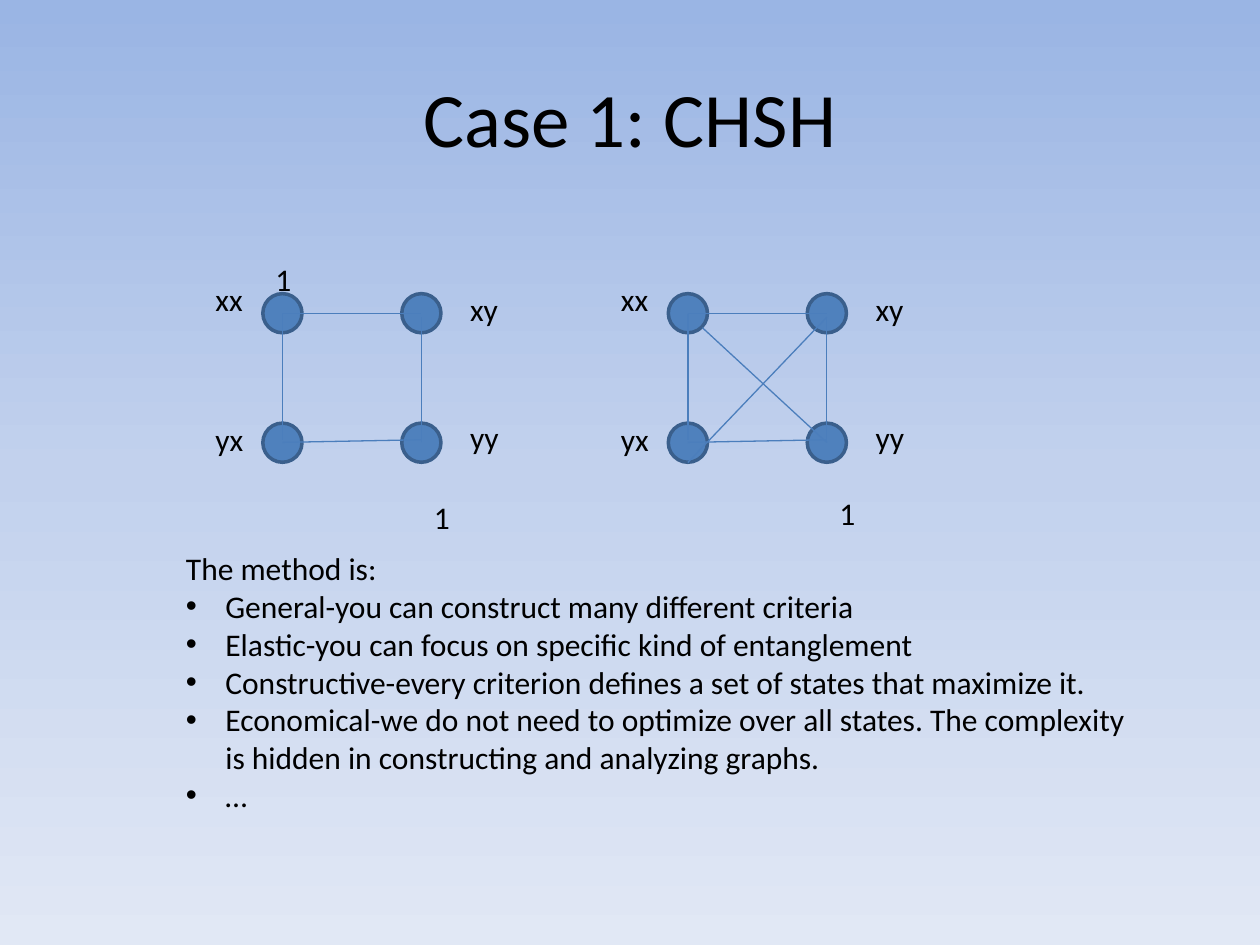
from copy import deepcopy

from lxml import etree
from pptx import Presentation
from pptx.dml.color import RGBColor
from pptx.enum.shapes import MSO_CONNECTOR, MSO_SHAPE
from pptx.enum.text import MSO_ANCHOR, MSO_AUTO_SIZE, PP_ALIGN
from pptx.oxml.ns import qn
from pptx.util import Pt

OVAL = MSO_SHAPE.OVAL
STRAIGHT = MSO_CONNECTOR.STRAIGHT
LEFT, CENTER = PP_ALIGN.LEFT, PP_ALIGN.CENTER
TOP, MIDDLE = MSO_ANCHOR.TOP, MSO_ANCHOR.MIDDLE
NO_FIT, FIT_SHAPE = MSO_AUTO_SIZE.NONE, MSO_AUTO_SIZE.SHAPE_TO_FIT_TEXT

BACKGROUND = [(0, "9AB5E4"), (0.5, "C2D1ED"), (1, "E1E8F5")]
NODE_SIZE = 22.4
COLUMN_STEP, ROW_STEP = 79.4, 74
LABEL_WIDTH, WEIGHT_WIDTH, LABEL_HEIGHT = 32, 23.5, 29
INDENT = 22.5

# Offsets in points from the top left corner of a graph
LABELS = [("xx", -34.2, -11.2), ("xy", 111.3, -5.8),
          ("yy", 111.3, 67.7), ("yx", -34.2, 68.4)]
SIDES = [(90.5, 85, 90.5, 13.5), (11.2, 83.5, 11.2, 11.5),
         (11.2, 11.5, 90.5, 11.5), (90.5, 83.5, 11.2, 85)]
DIAGONALS = [(19.5, 19.5, 90.5, 85), (90.5, 13.5, 11.2, 96.5)]

METHOD_POINTS = [
    "General-you can construct many different criteria",
    "Elastic-you can focus on specific kind of entanglement",
    "Constructive-every criterion defines a set of states that maximize it.",
    "Economical-we do not need to optimize over all states. "
    "The complexity is hidden in constructing and analyzing graphs.",
    "…",
]


def color(value):
    return RGBColor.from_string(value)


def paint_background(slide):
    fill = slide.background.fill
    fill.gradient()
    fill.gradient_angle = 270
    first = fill._fill._gradFill.gsLst[0]
    first.addnext(deepcopy(first))
    for stop, (position, value) in zip(fill.gradient_stops, BACKGROUND):
        stop.position = position
        stop.color.rgb = color(value)


def add_text(slide, text, left, top, width, height, size=18, align=LEFT,
             anchor=TOP, wrap=False, fit=FIT_SHAPE):
    """Add a text box with one paragraph per line of text."""
    box = slide.shapes.add_textbox(Pt(left), Pt(top), Pt(width), Pt(height))
    frame = box.text_frame
    frame.text = text
    frame.word_wrap = wrap
    frame.auto_size = fit
    frame.vertical_anchor = anchor
    for paragraph in frame.paragraphs:
        paragraph.alignment = align
        font = paragraph.runs[0].font
        font.name = "Calibri"
        font.size = Pt(size)
        font.color.rgb = color("000000")
    return frame


def add_bullet(paragraph):
    properties = paragraph._p.get_or_add_pPr()
    properties.set("marL", str(Pt(INDENT)))
    properties.set("indent", str(-Pt(INDENT)))
    etree.SubElement(properties, qn("a:buFont"), typeface="Arial")
    etree.SubElement(properties, qn("a:buChar"), char="•")


def add_node(slide, left, top):
    node = slide.shapes.add_shape(
        OVAL, Pt(left), Pt(top), Pt(NODE_SIZE), Pt(NODE_SIZE))
    node.shadow.inherit = False
    node.fill.solid()
    node.fill.fore_color.rgb = color("4F81BD")
    node.line.color.rgb = color("3A5F8C")
    node.line.width = Pt(2)


def add_edge(slide, start_x, start_y, end_x, end_y):
    edge = slide.shapes.add_connector(
        STRAIGHT, Pt(start_x), Pt(start_y), Pt(end_x), Pt(end_y))
    edge.line.color.rgb = color("4B7EBC")
    edge.line.width = Pt(0.75)
    etree.SubElement(edge._element.spPr, qn("a:effectLst"))


def add_graph(slide, left, top, edges, weights):
    """Draw four nodes, their edges and labels; weights are offsets of the 1s."""
    for row in range(2):
        for column in range(2):
            add_node(slide, left + column * COLUMN_STEP, top + row * ROW_STEP)
    for start_x, start_y, end_x, end_y in edges:
        add_edge(slide, left + start_x, top + start_y,
                 left + end_x, top + end_y)
    for text, x, y in LABELS:
        add_text(slide, text, left + x, top + y, LABEL_WIDTH, LABEL_HEIGHT)
    for x, y in weights:
        add_text(slide, "1", left + x, top + y, WEIGHT_WIDTH, LABEL_HEIGHT)


def add_method(slide, left, top, width, height):
    lines = ["The method is:"] + METHOD_POINTS
    frame = add_text(slide, "\n".join(lines), left, top, width, height,
                     wrap=True)
    for paragraph in frame.paragraphs[1:]:
        add_bullet(paragraph)


def main():
    presentation = Presentation()
    presentation.slide_width, presentation.slide_height = Pt(720), Pt(540)
    slide = presentation.slides.add_slide(presentation.slide_layouts[6])
    paint_background(slide)
    add_text(slide, "Case 1: CHSH", 36, 21.6, 648, 90, size=44, align=CENTER,
             anchor=MIDDLE, wrap=True, fit=NO_FIT)
    add_graph(slide, 150.2, 167.8, SIDES, [(0, -22.6), (90.7, 113.4)])
    add_graph(slide, 381.9, 167.8, SIDES + DIAGONALS, [(90.7, 110.9)])
    add_method(slide, 99.2, 310.3, 556, 160)
    presentation.save("out.pptx")


if __name__ == "__main__":
    main()
